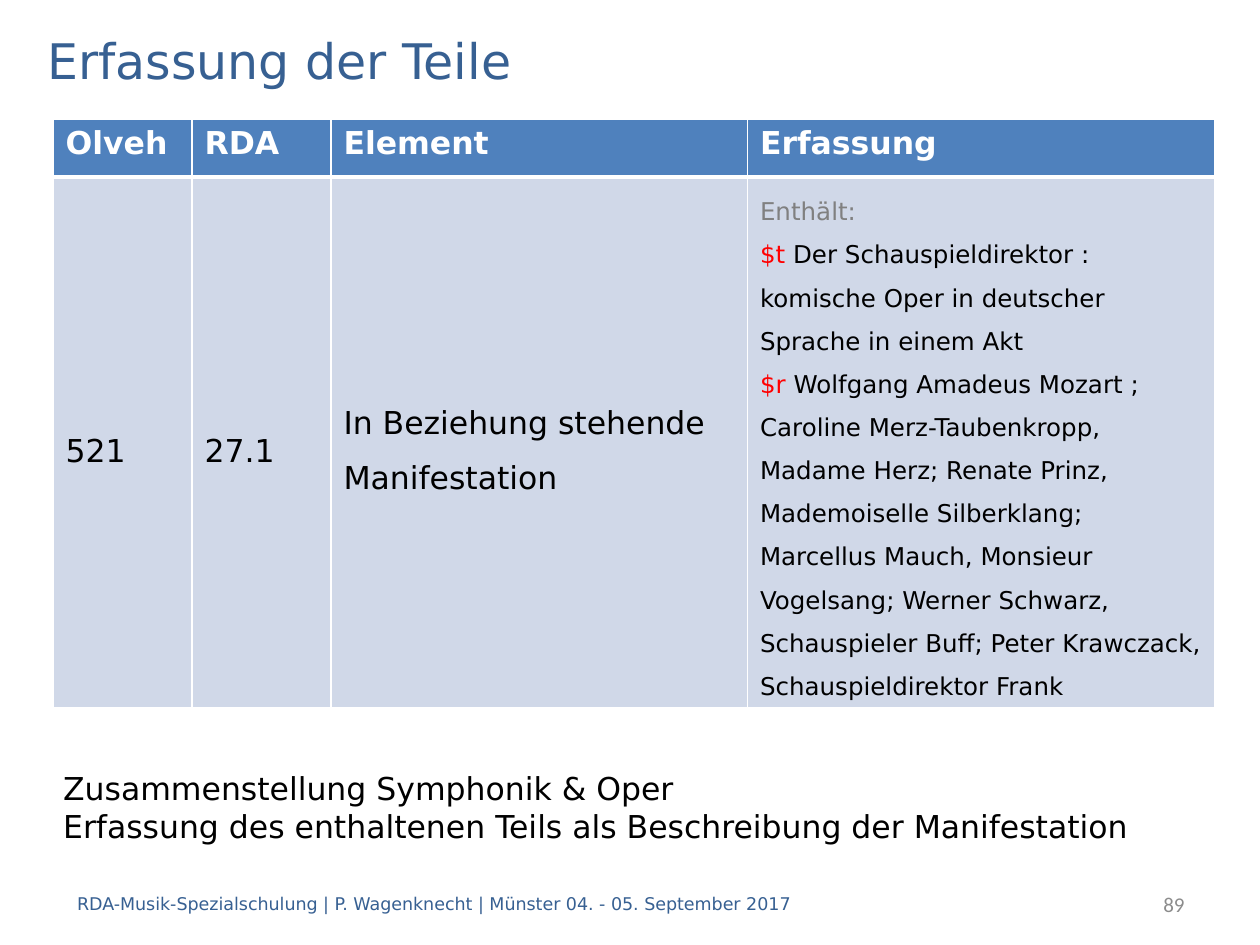
from lxml.etree import SubElement
from pptx import Presentation
from pptx.dml.color import RGBColor
from pptx.enum.text import MSO_ANCHOR as Anchor, PP_ALIGN as Align
from pptx.oxml.ns import qn
from pptx.util import Pt

SANS = "DejaVu Sans"
BLACK, WHITE, NAVY, GREY, RED = "000000", "FFFFFF", "376092", "808080", "FF0000"
HEADER_FILL, BODY_FILL = "4F81BD", "D0D8E8"

HEADINGS = ["Olveh", "RDA", "Element", "Erfassung"]
ENTRY = ["521", "27.1", "In Beziehung stehende Manifestation"]
CONTENTS = [
    [("Enthält:", GREY)],
    [("$t ", RED),
     ("Der Schauspieldirektor : komische Oper in deutscher Sprache in einem Akt", BLACK)],
    [("$r", RED),
     (" Wolfgang Amadeus Mozart ; Caroline Merz-Taubenkropp, Madame Herz; "
      "Renate Prinz, Mademoiselle Silberklang; Marcellus Mauch, Monsieur Vogelsang; "
      "Werner Schwarz, Schauspieler Buff; Peter Krawczack, "
      "Schauspieldirektor Frank", BLACK)],
]


def rgb(color):
    return RGBColor.from_string(color)


def write(frame, paragraphs, size, font=SANS, bold=False, align=Align.LEFT, spacing=None, gap=0):
    """Fill a text frame with paragraphs, each a list of (text, colour) runs."""
    frame.word_wrap = True
    for index, parts in enumerate(paragraphs):
        paragraph = frame.paragraphs[0] if index == 0 else frame.add_paragraph()
        paragraph.alignment = align
        paragraph.line_spacing = spacing
        paragraph.space_before = paragraph.space_after = Pt(gap)
        for text, color in parts:
            run = paragraph.add_run()
            run.text = text
            run.font.name, run.font.size, run.font.bold = font, Pt(size), bold
            run.font.color.rgb = rgb(color)


def place(part, left, top, width, height):
    part.left, part.top, part.width, part.height = map(Pt, (left, top, width, height))


def add_title(slide, *box):
    title = slide.shapes.title
    place(title, *box)
    title.text_frame.vertical_anchor = Anchor.MIDDLE
    write(title.text_frame, [[("Erfassung der Teile", NAVY)]], 28)


def add_label(slide, box, paragraphs, size, **style):
    label = slide.shapes.add_textbox(*map(Pt, box))
    label.text_frame.vertical_anchor = Anchor.MIDDLE
    write(label.text_frame, paragraphs, size, **style)


def format_cell(cell, fill, bottom=1):
    """Set the fill and the white borders; only the bottom width varies."""
    properties = cell._tc.get_or_add_tcPr()
    for side, width in (("L", 1), ("R", 1), ("T", 1), ("B", bottom)):
        line = SubElement(properties, qn(f"a:ln{side}"), w=str(Pt(width)))
        SubElement(SubElement(line, qn("a:solidFill")), qn("a:srgbClr"), val=WHITE)
    cell.fill.solid()
    cell.fill.fore_color.rgb = rgb(fill)


def add_entry_table(slide, left, top, widths, heights):
    box = map(Pt, (left, top, sum(widths), sum(heights)))
    table = slide.shapes.add_table(len(heights), len(widths), *box).table
    for column, width in zip(table.columns, widths):
        column.width = Pt(width)
    for row, height in zip(table.rows, heights):
        row.height = Pt(height)

    for column, heading in enumerate(HEADINGS):
        header, body = table.cell(0, column), table.cell(1, column)
        format_cell(header, HEADER_FILL, bottom=3)
        write(header.text_frame, [[(heading, WHITE)]], 18, bold=True)
        format_cell(body, BODY_FILL)
        body.vertical_anchor = Anchor.MIDDLE
        if column < len(ENTRY):
            write(body.text_frame, [[(ENTRY[column], BLACK)]], 18, spacing=1.5, gap=6)
        else:
            write(body.text_frame, CONTENTS, 14, spacing=1.5)


def add_footer(slide, left, top, width, height):
    credit_width, number_width = 482, 114
    credit = "RDA-Musik-Spezialschulung | P. Wagenknecht | Münster 04. - 05. September 2017"
    add_label(slide, (left, top, credit_width, height), [[(credit, NAVY)]], 10)
    add_label(slide, (left + width - number_width, top, number_width, height),
              [[("89", "8C8C8C")]], 12, font="Calibri", align=Align.RIGHT)


def main():
    deck = Presentation()
    deck.slide_width, deck.slide_height = Pt(720), Pt(540)
    slide = deck.slides.add_slide(deck.slide_layouts[5])
    add_title(slide, 20, 14.5, 680, 40)
    add_entry_table(slide, 30.3, 68.2, [79.4, 79.4, 238, 267], [33, 302])
    summary = ["Zusammenstellung Symphonik & Oper",
               "Erfassung des enthaltenen Teils als Beschreibung der Manifestation"]
    add_label(slide, (29, 441, 680, 40), [[(line, BLACK)] for line in summary], 18)
    add_footer(slide, 37, 502, 647, 29)
    deck.save("out.pptx")


if __name__ == "__main__":
    main()
